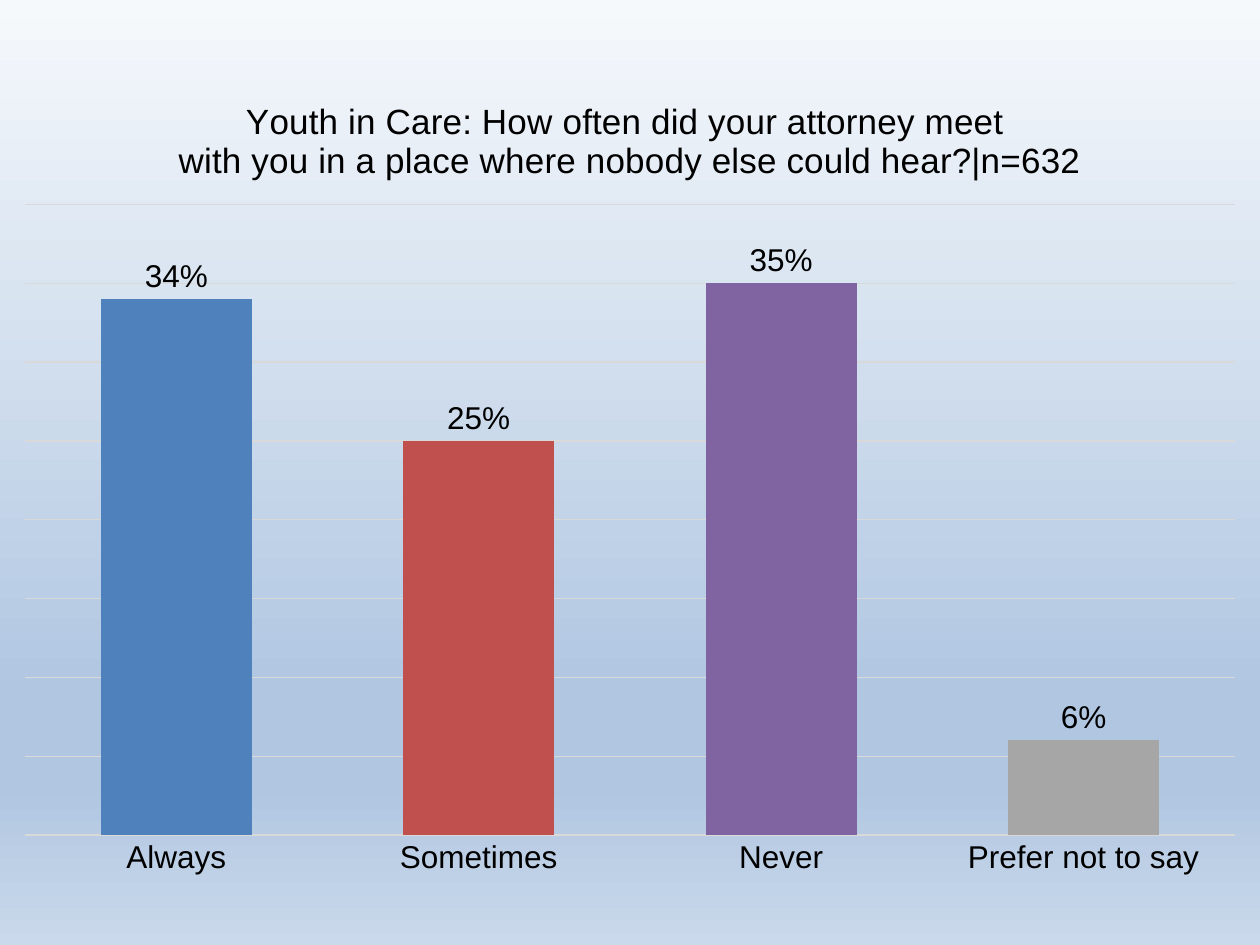
import copy
from dataclasses import dataclass

import lxml.etree
import pptx
import pptx.chart.data
import pptx.dml.color
import pptx.enum.chart
import pptx.oxml
import pptx.oxml.ns
import pptx.util


@dataclass(frozen=True)
class Theme:
    font: str = "Arial"
    text: str = "000000"
    grid: str = "D9D9D9"
    empty_series: str = "8061A5"
    title_size: int = 20
    label_size: int = 18
    backdrop: tuple = ((0, "F6F9FC"), (74, "B0C6E1"), (83, "B0C6E1"), (100, "CAD9EB"))


@dataclass(frozen=True)
class Answer:
    name: str
    percent: int
    color: str


THEME = Theme()
ANSWERS = [
    Answer("Always", 34, "4F81BD"),
    Answer("Sometimes", 25, "C0504D"),
    Answer("Never", 35, "8064A2"),
    Answer("Prefer not to say", 6, "A6A6A6"),
]
QUESTION = [
    "Youth in Care: How often did your attorney meet ",
    "with you in a place where nobody else could hear?|n=632",
]
PLOT_AREA = {"x": 0.02, "y": 0.16, "w": 0.96, "h": 0.77}


def rgb(color: str) -> pptx.dml.color.RGBColor:
    return pptx.dml.color.RGBColor.from_string(color)


def format_font(font, size: int) -> None:
    font.name = THEME.font
    font.size = pptx.util.Pt(size)
    font.bold = False
    font.color.rgb = rgb(THEME.text)


def write_text(frame, lines: list[str], *, size: int) -> None:
    for index, line in enumerate(lines):
        para = frame.add_paragraph() if index else frame.paragraphs[0]
        span = para.add_run()
        span.text = line
        format_font(para.font, size)
        format_font(span.font, size)


def format_line(line, width: float) -> None:
    line.color.rgb = rgb(THEME.grid)
    line.width = pptx.util.Pt(width)


def paint_background(page) -> None:
    fill = page.background.fill
    fill.gradient()
    fill.gradient_angle = 270
    stops = next(page._element.iter(pptx.oxml.ns.qn("a:gsLst")))
    sample = copy.deepcopy(stops[0])
    for child in list(sample):
        sample.remove(child)
    for stop in list(stops):
        stops.remove(stop)
    for position, color in THEME.backdrop:
        stop = copy.deepcopy(sample)
        stop.set("pos", str(position * 1000))
        lxml.etree.SubElement(stop, pptx.oxml.ns.qn("a:srgbClr")).set("val", color)
        stops.append(stop)


def place_plot_area(chart) -> None:
    qn = pptx.oxml.ns.qn
    plot_area = next(chart._chartSpace.iter(qn("c:plotArea")))
    for old in plot_area.findall(qn("c:layout")):
        plot_area.remove(old)
    holder = lxml.etree.Element(qn("c:layout"))
    manual = lxml.etree.SubElement(holder, qn("c:manualLayout"))
    settings = {"layoutTarget": "inner", "xMode": "edge", "yMode": "edge", **PLOT_AREA}
    for tag, setting in settings.items():
        lxml.etree.SubElement(manual, qn(f"c:{tag}")).set("val", str(setting))
    plot_area.insert(0, holder)


def format_axes(chart) -> None:
    axis = chart.category_axis
    axis.major_tick_mark = pptx.enum.chart.XL_TICK_MARK.NONE
    format_font(axis.tick_labels.font, THEME.label_size)
    format_line(axis.format.line, 1)
    scale = chart.value_axis
    scale.visible = False
    scale.minimum_scale, scale.maximum_scale, scale.major_unit = 0, 40, 5
    scale.has_major_gridlines = True
    format_line(scale.major_gridlines.format.line, 0.75)


def format_bars(plot, answers: list[Answer]) -> None:
    plot.gap_width = 100
    plot.overlap = -24
    plot.vary_by_categories = False
    empty, shares = plot.series
    empty.format.fill.solid()
    empty.format.fill.fore_color.rgb = rgb(THEME.empty_series)
    for tag in ("c:cat", "c:val"):
        for element in empty._element.findall(pptx.oxml.ns.qn(tag)):
            empty._element.remove(element)
    labels = shares.data_labels
    labels.show_value = True
    labels.number_format = "0\\%;"
    labels.number_format_is_linked = False
    labels.position = pptx.enum.chart.XL_LABEL_POSITION.OUTSIDE_END
    format_font(labels.font, THEME.label_size)
    for index, answer in enumerate(answers):
        fill = shares.points[index].format.fill
        fill.solid()
        fill.fore_color.rgb = rgb(answer.color)


def draw_chart(page, answers: list[Answer]) -> None:
    data = pptx.chart.data.CategoryChartData()
    data.categories = [answer.name for answer in answers]
    data.add_series("Series 1", [])
    data.add_series("Series 2", [answer.percent for answer in answers])
    box = page.shapes.add_chart(
        pptx.enum.chart.XL_CHART_TYPE.COLUMN_CLUSTERED,
        pptx.util.Pt(0), pptx.util.Pt(42), pptx.util.Pt(720), pptx.util.Pt(468), data,
    )
    chart = box.chart
    format_font(chart.font, 10)
    chart.has_legend = False
    chart.has_title = True
    write_text(chart.chart_title.text_frame, QUESTION, size=THEME.title_size)
    place_plot_area(chart)
    format_axes(chart)
    format_bars(chart.plots[0], answers)


def main() -> None:
    deck = pptx.Presentation()
    deck.slide_width = pptx.util.Pt(720)
    deck.slide_height = pptx.util.Pt(540)
    page = deck.slides.add_slide(deck.slide_layouts[6])
    paint_background(page)
    draw_chart(page, ANSWERS)
    deck.save("out.pptx")


if __name__ == "__main__":
    main()
